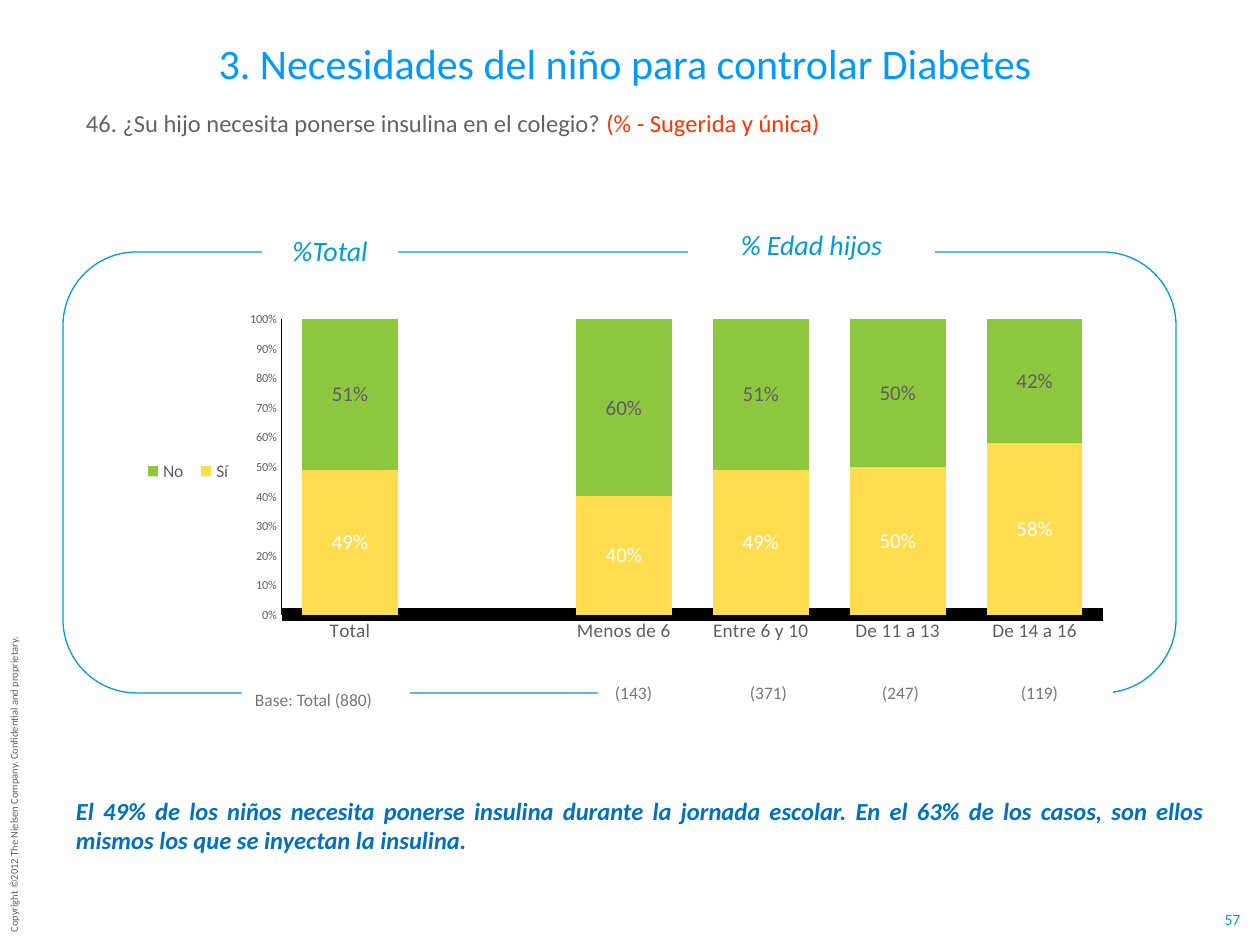
from lxml import etree
from pptx import Presentation
from pptx.chart.data import CategoryChartData
from pptx.dml.color import RGBColor
from pptx.enum.chart import XL_CHART_TYPE, XL_LABEL_POSITION, XL_LEGEND_POSITION, XL_TICK_MARK
from pptx.enum.shapes import MSO_SHAPE
from pptx.enum.text import MSO_ANCHOR, PP_ALIGN
from pptx.oxml import parse_xml
from pptx.oxml.ns import nsdecls, qn
from pptx.util import Pt

LEFT, CENTER, JUSTIFY = PP_ALIGN.LEFT, PP_ALIGN.CENTER, PP_ALIGN.JUSTIFY
TOP, MIDDLE = MSO_ANCHOR.TOP, MSO_ANCHOR.MIDDLE
NO_TICK = XL_TICK_MARK.NONE

FONT = "Calibri"
EMU_PER_PX = 914400 / 126
COLORS = {
    "white": "FFFFFF", "black": "000000", "title": "0099FF", "accent": "009DD9",
    "question": "616365", "hint": "FF3300", "chart": "5F5F5F", "base": "777777",
    "conclusion": "0070C0", "yes": "FFDD4F", "no": "8DC63F",
}

TITLE = "3. Necesidades del niño para controlar Diabetes"
QUESTION = [("46. ¿Su hijo necesita ponerse insulina en el colegio? ", "question"),
            ("(% - Sugerida y única)", "hint")]
CONCLUSION = ("El 49% de los niños necesita ponerse insulina durante la jornada escolar. "
              "En el 63% de los casos, son ellos mismos los que se inyectan la insulina.")
COPYRIGHT = "Copyright ©2012 The Nielsen Company. Confidential and proprietary."
PAGE_NUMBER = "57"

HEADINGS = [("%Total", (262, 228, 136, 47)), ("% Edad hijos", (688, 222, 247, 47))]
BASE_TOTAL = "Base: Total (880)"
BASES_BY_AGE = ["(143)", "(371)", "(247)", "(119)"]
BASE_TABS = [135, 267, 406]

CATEGORIES = ["Total", "", "Menos de 6", "Entre 6 y 10", "De 11 a 13", "De 14 a 16"]
SERIES = [  # name, values, fill, label color
    ("Sí", [0.49, None, 0.40, 0.49, 0.50, 0.58], "yes", "white"),
    ("No", [0.51, None, 0.60, 0.51, 0.50, 0.42], "no", "chart"),
]
PLOT_LAYOUT = {"x": 0.19, "y": 0.06, "w": 0.79, "h": 0.7}
LEGEND_LAYOUT = {"x": 0.05, "y": 0.19, "w": 0.1, "h": 0.46}


def px(value):
    return round(value * EMU_PER_PX)


def rgb(name):
    return RGBColor.from_string(COLORS[name])


def style_font(font, size, color, **format):
    font.name, font.size = FONT, Pt(size)
    font.color.rgb = rgb(color)
    for name, value in format.items():
        setattr(font, name, value)


def add_text(slide, box, text, size, color="chart", align=LEFT, anchor=TOP, wrap=True,
             fill=None, insets=(13, 6), tabs=(), rotation=0, **font_format):
    """Text is a string or a list of (text, color) runs; a fill makes it a rectangle."""
    place = [px(value) for value in box]
    if fill:
        shape = slide.shapes.add_shape(MSO_SHAPE.RECTANGLE, *place)
        shape.shadow.inherit = False
        shape.fill.solid()
        shape.fill.fore_color.rgb = rgb(fill)
        shape.line.fill.background()
    else:
        shape = slide.shapes.add_textbox(*place)
    shape.rotation = rotation
    frame = shape.text_frame
    frame.word_wrap, frame.vertical_anchor = wrap, anchor
    frame.margin_left = frame.margin_right = px(insets[0])
    frame.margin_top = frame.margin_bottom = px(insets[1])
    paragraph = frame.paragraphs[0]
    paragraph.alignment = align
    if tabs:
        tab_list = etree.SubElement(paragraph._p.get_or_add_pPr(), qn("a:tabLst"))
        for position in tabs:
            etree.SubElement(tab_list, qn("a:tab"), pos=str(px(position)), algn="l")
    for content, run_color in [(text, color)] if isinstance(text, str) else text:
        run = paragraph.add_run()
        run.text = content
        style_font(run.font, size, run_color, **font_format)
    return shape


def manual_layout(values, inner=False):
    target = '<c:layoutTarget val="inner"/>' if inner else ""
    modes = "".join(f'<c:{axis}Mode val="edge"/>' for axis in "xy")
    sizes = "".join(f'<c:{key} val="{value}"/>' for key, value in values.items())
    return parse_xml(f'<c:layout {nsdecls("c")}><c:manualLayout>{target}{modes}{sizes}'
                     "</c:manualLayout></c:layout>")


def style_axis(axis, size, line_width):
    axis.has_major_gridlines = False
    axis.major_tick_mark = axis.minor_tick_mark = NO_TICK
    style_font(axis.tick_labels.font, size, "chart")
    axis.format.line.color.rgb = rgb("black")
    axis.format.line.width = Pt(line_width)


def add_insulin_chart(slide, box):
    data = CategoryChartData(number_format="0%")
    data.categories = CATEGORIES
    for name, values, *_ in SERIES:
        data.add_series(name, values)
    chart = slide.shapes.add_chart(XL_CHART_TYPE.COLUMN_STACKED_100,
                                   *[px(value) for value in box], data).chart
    chart.has_title = False
    style_font(chart.font, 10, "chart")

    plot = chart.plots[0]
    plot.gap_width, plot.overlap, plot.vary_by_categories = 43, 100, False
    for series, (_, _, fill, label_color) in zip(plot.series, SERIES):
        series.format.fill.solid()
        series.format.fill.fore_color.rgb = rgb(fill)
        labels = series.data_labels
        labels.show_value = True
        labels.number_format, labels.number_format_is_linked = "0%", False
        labels.position = XL_LABEL_POSITION.CENTER
        style_font(labels.font, 12, label_color)

    style_axis(chart.category_axis, 11, 7.75)
    style_axis(chart.value_axis, 7, 0.75)
    chart.value_axis.major_unit = 0.1
    chart.value_axis.tick_labels.number_format = "0%"
    chart.value_axis.tick_labels.number_format_is_linked = False

    chart.has_legend = True
    legend = chart.legend
    legend.position, legend.include_in_layout = XL_LEGEND_POSITION.LEFT, False
    style_font(legend.font, 10, "chart")
    for element in (legend._element, plot._element.getparent()):
        for layout in element.findall(qn("c:layout")):
            element.remove(layout)
    legend._element.find(qn("c:legendPos")).addnext(manual_layout(LEGEND_LAYOUT))
    plot._element.getparent().insert(0, manual_layout(PLOT_LAYOUT, inner=True))


def main():
    presentation = Presentation()
    presentation.slide_width, presentation.slide_height = px(1260), px(945)
    slide = presentation.slides.add_slide(presentation.slide_layouts[6])

    add_text(slide, (-149, 770, 326, 25), COPYRIGHT, 6, wrap=False, rotation=270)
    add_text(slide, (1223, 910, 19, 19), PAGE_NUMBER, 9, "accent", align=CENTER,
             anchor=MIDDLE, wrap=False, insets=(0, 0))

    panel = slide.shapes.add_shape(MSO_SHAPE.ROUNDED_RECTANGLE,
                                   px(63), px(252), px(1113), px(441))
    panel.shadow.inherit = False
    panel.fill.solid()
    panel.fill.fore_color.rgb = rgb("white")
    panel.line.color.rgb = rgb("accent")
    panel.line.width = Pt(0.75)

    add_text(slide, (105, 32, 1040, 63), TITLE, 24, "title", align=CENTER)
    add_text(slide, (73, 102, 1187, 118), QUESTION, 14)
    add_insulin_chart(slide, (84, 294, 1040, 422))
    for heading, box in HEADINGS:
        add_text(slide, box, heading, 16, "accent", align=CENTER, fill="white", italic=True)
    add_text(slide, (242, 683, 168, 34), BASE_TOTAL, 10, "base", fill="white")
    add_text(slide, (598, 676, 515, 34), "\t".join(BASES_BY_AGE), 10, "base",
             fill="white", insets=(17, 6), tabs=BASE_TABS)
    add_text(slide, (63, 790, 1155, 72), CONCLUSION, 14, "conclusion", align=JUSTIFY,
             bold=True, italic=True)

    presentation.save("out.pptx")


if __name__ == "__main__":
    main()
